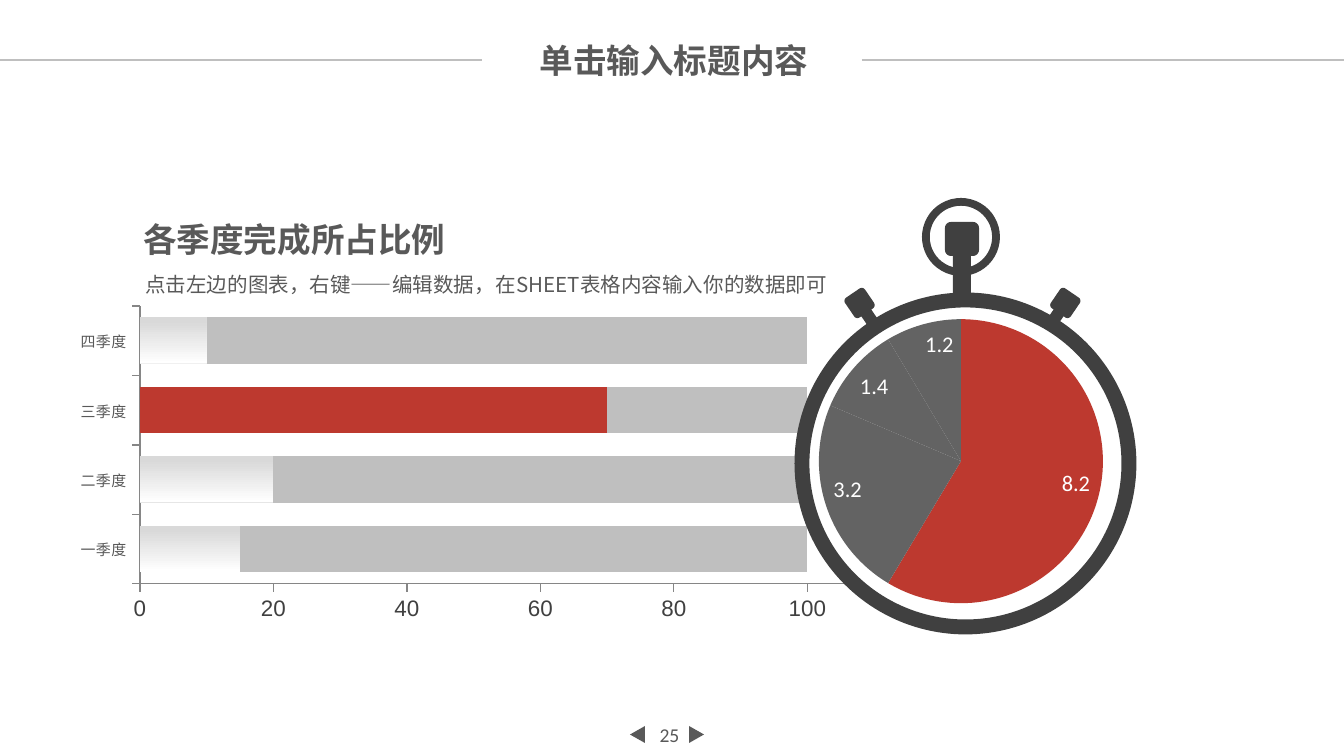
import math
from copy import deepcopy
from lxml import etree
from pptx import Presentation, util as u
from pptx.chart.data import CategoryChartData
from pptx.dml.color import RGBColor
from pptx.enum import chart as ch, shapes, text
from pptx.oxml import parse_xml
from pptx.oxml.ns import nsdecls, qn

EMU_PER_PX = 914400 / 134.4
SANS = "Noto Sans CJK SC"
INK, DARK, RED, SILVER, SLATE = "595959", "404040", "BD392F", "BFBFBF", "636363"


def px(*lengths):
    return [u.Emu(round(n * EMU_PER_PX)) for n in lengths]


def style(font, size, color, name, bold=False):
    font.size, font.bold, font.name = u.Pt(size), bold, name
    font.color.rgb = RGBColor.from_string(color)
    etree.SubElement(font._element.find(qn("a:latin")).getparent(), qn("a:ea")).set("typeface", name)


prs = Presentation()
prs.slide_width, prs.slide_height = px(1344, 756)
slide = prs.slides.add_slide(prs.slide_layouts[6])

# Page arrows
for left, turn in ((688, 90), (629, 270)):
    arrow = slide.shapes.add_shape(shapes.MSO_SHAPE.ISOSCELES_TRIANGLE, *px(left, 727, 17, 15))
    arrow.rotation = turn
    arrow.shadow.inherit = False
    arrow.fill.solid()
    arrow.fill.fore_color.rgb = RGBColor.from_string(INK)
    arrow.line.fill.background()

# Stacked bars: share done and share left per quarter
quarters = CategoryChartData()
quarters.categories = ["一季度", "二季度", "三季度", "四季度"]
done = [15, 20, 70, 10]
quarters.add_series("Series 1", done)
quarters.add_series("Series 2", [100 - share for share in done])
bars = slide.shapes.add_chart(ch.XL_CHART_TYPE.BAR_STACKED, *px(62, 276, 939, 349), quarters).chart
bar_plot = bars.plots[0]
bar_plot.gap_width, bar_plot.overlap = 50, 100
done_bars, rest_bars = bar_plot.series
rest_bars.format.fill.solid()
rest_bars.format.fill.fore_color.rgb = RGBColor.from_string(SILVER)

fade = done_bars.format.fill
fade.gradient()
fade.gradient_angle = 90
first_stop = done_bars._element.xpath(".//a:gs")[0]
first_stop.addprevious(deepcopy(first_stop))
for stop, (position, color) in zip(fade.gradient_stops, ((0, "D9D9D9"), (0.01, "FFFFFF"), (0.92, "D9D9D9"))):
    stop.position = position
    stop.color.rgb = RGBColor.from_string(color)
best = done_bars.points[2].format.fill
best.solid()
best.fore_color.rgb = RGBColor.from_string(RED)

for axis, size, color, font in ((bars.category_axis, 8, INK, SANS), (bars.value_axis, 12, DARK, "Arial")):
    axis.has_major_gridlines = False
    axis.major_tick_mark = ch.XL_TICK_MARK.OUTSIDE
    axis.format.line.width = u.Pt(0.75)
    axis.format.line.color.rgb = RGBColor.from_string("868686")
    style(axis.tick_labels.font, size, color, font)
bars.value_axis.minimum_scale, bars.value_axis.maximum_scale = 0, 120
bars.value_axis.major_unit = 20

# Stopwatch rim and ring
watch = slide.shapes.add_group_shape().shapes
rim = watch.add_shape(shapes.MSO_SHAPE.OVAL, *px(802, 300, 327, 327))
rim.shadow.inherit = False
rim.fill.solid()
rim.fill.fore_color.rgb = RGBColor.from_string("FFFFFF")
rim.line.width = u.Pt(8)
rim.line.color.rgb = RGBColor.from_string(DARK)

# Knobs: a rounded head on a narrower stem
metal = []
for left, top, head, stem, height, radius, turn in (
    (1050, 290, 24, 12, 36, 4, 34.2),
    (851, 290, 24, 12, 36, 4, -34.2),
    (945, 222, 34, 18, 78, 6, 0),
):
    bottom = top + head
    stem_left = left + (head - stem) / 2
    stem_right = stem_left + stem
    near, far = radius, head - radius
    outline = []
    for x, y, start in ((near, near, 180), (far, near, 270), (far, far, 0), (near, far, 90)):
        for step in range(7):
            angle = math.radians(start + 15 * step)
            outline.append((left + x + radius * math.cos(angle), top + y + radius * math.sin(angle)))
        if start == 0:
            outline += [(stem_right, bottom), (stem_right, top + height),
                        (stem_left, top + height), (stem_left, bottom)]
    corners = [px(*point) for point in outline]
    pen = watch.build_freeform(*corners[0])
    pen.add_line_segments(corners[1:], close=True)
    knob = pen.convert_to_shape()
    knob.rotation = turn
    metal.append(knob)

ring = watch.add_shape(shapes.MSO_SHAPE.DONUT, *px(922, 198, 78, 78))
ring.adjustments[0] = 0.1
for part in metal + [ring]:
    part.shadow.inherit = False
    part.fill.solid()
    part.fill.fore_color.rgb = RGBColor.from_string(DARK)
    part.line.fill.background()

# Dial
shares = CategoryChartData()
shares.categories = ["1", "2", "3", "4"]
shares.add_series("Series 1", [8.2, 3.2, 1.4, 1.2])
dial = watch.add_chart(ch.XL_CHART_TYPE.PIE, *px(720, 300, 482, 321), shares).chart
dial.plots[0].vary_by_categories = True
slices = dial.plots[0].series[0]
for index, color in enumerate((RED, SLATE, SLATE, SLATE)):
    fill = slices.points[index].format.fill
    fill.solid()
    fill.fore_color.rgb = RGBColor.from_string(color)
labels = slices.data_labels
labels.show_value = True
labels.position = ch.XL_LABEL_POSITION.INSIDE_END
style(labels.font, 12, "FFFFFF", "Calibri")

# Plot areas as shares of each chart
for chart, box in ((bars, (0.083, 0.086, 0.853, 0.796)), (dial, (0.205, 0.06, 0.59, 0.885))):
    chart.has_legend = chart.has_title = False
    chart.font.size, chart.font.name = u.Pt(18), "Calibri"
    area = chart._chartSpace.xpath(".//c:plotArea")[0]
    for old in area.findall(qn("c:layout")):
        area.remove(old)
    sides = "".join(f'<c:{side} val="{value}"/>' for side, value in zip("xywh", box))
    modes = '<c:xMode val="edge"/><c:yMode val="edge"/>'
    area.insert(0, parse_xml(
        f'<c:layout {nsdecls("c")}><c:manualLayout><c:layoutTarget val="inner"/>'
        f"{modes}{sides}</c:manualLayout></c:layout>"))

# Texts
LEFT, CENTER = text.PP_ALIGN.LEFT, text.PP_ALIGN.CENTER
TOP, MIDDLE = text.MSO_ANCHOR.TOP, text.MSO_ANCHOR.MIDDLE
for box, words, size, font, bold, align, anchor, wrap in (
    ((640, 715, 59, 40), "25", 10.5, "Calibri", False, CENTER, MIDDLE, True),
    ((130, 212, 332, 54), "各季度完成所占比例", 18, SANS, True, LEFT, TOP, False),
    ((132, 265, 767, 39), "点击左边的图表，右键——编辑数据，在SHEET表格内容输入你的数据即可",
     11, SANS, False, LEFT, TOP, True),
    ((485, 33, 378, 54), "单击输入标题内容", 18, SANS, True, CENTER, TOP, True),
):
    frame = slide.shapes.add_textbox(*px(*box)).text_frame
    frame.word_wrap, frame.vertical_anchor = wrap, anchor
    paragraph = frame.paragraphs[0]
    paragraph.alignment = align
    run = paragraph.add_run()
    run.text = words
    style(run.font, size, INK, font, bold)

# Rules beside the title
for start, end in ((0, 482), (862, 1344)):
    rule = slide.shapes.add_connector(shapes.MSO_CONNECTOR.STRAIGHT, *px(start, 60, end, 60))
    rule.line.width = u.Pt(0.75)
    rule.line.color.rgb = RGBColor.from_string(SILVER)
    etree.SubElement(rule._element.spPr, qn("a:effectLst"))

prs.save("out.pptx")
